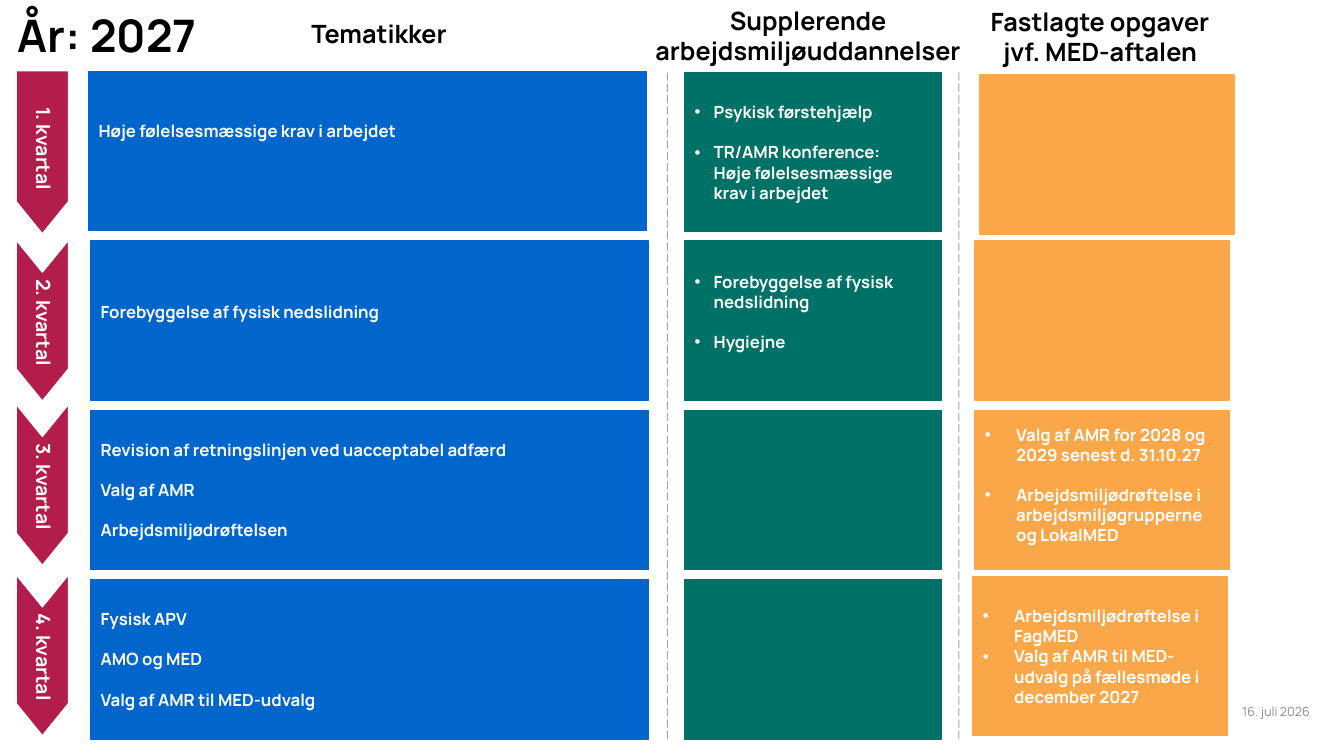
from pptx import Presentation
from pptx.dml.color import RGBColor
from pptx.enum.dml import MSO_LINE
from pptx.enum.shapes import MSO_CONNECTOR, MSO_SHAPE
from pptx.enum.text import MSO_ANCHOR, PP_ALIGN
from pptx.oxml.ns import qn
from pptx.util import Inches, Pt
from lxml import etree

RECT, LINE = MSO_SHAPE.RECTANGLE, MSO_CONNECTOR.STRAIGHT
TOP, MID, LOW = MSO_ANCHOR.TOP, MSO_ANCHOR.MIDDLE, MSO_ANCHOR.BOTTOM
LEFT, MIDDLE, RIGHT = PP_ALIGN.LEFT, PP_ALIGN.CENTER, PP_ALIGN.RIGHT
DASH = MSO_LINE.LONG_DASH


class Theme:
    font = "Manrope"
    blue, green, orange, red = "0066CC", "007167", "FAA749", "B21D4B"
    black, white, grey = "000000", "FFFFFF", "8C8C8C"
    title, head, label, body, small = 32, 18, 14, 12, 9
    gap = 14.4


# Content: text, box, format
HEADS = [
    ("År: 2027", (0.08, -0.15, 3.27, 0.82),
     dict(size=Theme.title, align=LEFT, anchor=LOW, spacing=0.9)),
    ("Tematikker", (0.98, 0.13, 5.56, 0.4), {}),
    ("Supplerende arbejdsmiljøuddannelser", (6.38, 0, 3.27, 0.71), {}),
    ("Fastlagte opgaver jvf. MED-aftalen", (9.65, 0.01, 2.52, 0.71), {}),
    ("16. juli 2026", (11.83, 6.86, 1.26, 0.4),
     dict(size=Theme.small, color=Theme.grey, bold=False, align=RIGHT, anchor=MID)),
]

# Quarter label, top, length, text insets left and right
QUARTERS = [
    ("1. kvartal", 0.7, 1.62, (0.08, 0.15)),
    ("2. kvartal", 2.38, 1.6, (0.32, 0.28)),
    ("3. kvartal", 4.01, 1.6, (0.32, 0.28)),
    ("4. kvartal", 5.7, 1.6, (0.32, 0.28)),
]

# Each cell: items, nudge across and down, extra room below, gap.
# An item is a string, or a list of lines under one bullet.
COLUMNS = [
    dict(left=0.9, width=5.53, fill=Theme.blue, indent=0, cells=[
        dict(items=["Høje følelsesmæssige krav i arbejdet"], nudge=(-0.02, 0), below=0.4),
        dict(items=["Forebyggelse af fysisk nedslidning"], below=0.17),
        dict(items=["Revision af retningslinjen ved uacceptabel adfærd",
                    "Valg af AMR", "Arbejdsmiljødrøftelsen"]),
        dict(items=["Fysisk APV", "AMO og MED", "Valg af AMR til MED-udvalg"]),
    ]),
    dict(left=6.79, width=2.55, fill=Theme.green, indent=0.19, cells=[
        dict(items=["Psykisk førstehjælp",
                    ["TR/AMR konference:", "Høje følelsesmæssige", "krav i arbejdet"]],
             nudge=(0, 0.01)),
        dict(items=["Forebyggelse af fysisk nedslidning", "Hygiejne"], below=0.17),
        dict(items=[]),
        dict(items=[]),
    ]),
    dict(left=9.67, width=2.52, fill=Theme.orange, indent=0.31, cells=[
        dict(items=[], nudge=(0.05, 0.03)),
        dict(items=[]),
        dict(items=["Valg af AMR for 2028 og 2029 senest d. 31.10.27",
                    "Arbejdsmiljødrøftelse i arbejdsmiljøgrupperne og LokalMED"], below=0.1),
        dict(items=["Arbejdsmiljødrøftelse i FagMED",
                    "Valg af AMR til MED-udvalg på fællesmøde i december 2027"],
             nudge=(-0.02, -0.03), gap=0),
    ]),
]
ROW_TOP, ROW_STEP, ROW_TALL = 0.71, 1.68, 1.58
ARROW_MID, ARROW_WIDE, NOTCH = 0.42, 0.52, 0.32
RULES, RULE_TOP, RULE_END = (6.62, 9.51), 0.72, 7.33


def rgb(code):
    return RGBColor.from_string(code)


def write(shape, items, size=Theme.body, color=Theme.white, bold=True, align=LEFT,
          anchor=MID, spacing=None, indent=0, gap=0, insets=(0.1, 0.05, 0.1, 0.05)):
    frame = shape.text_frame
    frame.word_wrap = True
    frame.vertical_anchor = anchor
    (frame.margin_left, frame.margin_top,
     frame.margin_right, frame.margin_bottom) = map(Inches, insets)
    lines = [(text, i, j) for i, item in enumerate(items)
             for j, text in enumerate([item] if isinstance(item, str) else item)]
    for n, (text, i, j) in enumerate(lines):
        para = frame.add_paragraph() if n else frame.paragraphs[0]
        para.alignment = align
        if spacing:
            para.line_spacing = spacing
        if i and not j and gap:
            para.space_before = Pt(gap)
        if indent:
            props = para._p.get_or_add_pPr()
            props.set("marL", str(Inches(indent)))
            props.set("indent", str(0 if j else -Inches(indent)))
            if not j:
                etree.SubElement(props, qn("a:buFont")).set("typeface", "Arial")
                etree.SubElement(props, qn("a:buChar")).set("char", "•")
        run = para.add_run()
        run.text = text
        run.font.name, run.font.size, run.font.bold = Theme.font, Pt(size), bold
        run.font.color.rgb = rgb(color)


def paint(shape, fill, line):
    shape.shadow.inherit = False
    shape.fill.solid()
    shape.fill.fore_color.rgb = rgb(fill)
    shape.line.color.rgb = rgb(line)
    shape.line.width = Pt(1)


def add_arrow(shapes, top, size, notched):
    # Drawn pointing right, then turned to point down
    left = ARROW_MID - size / 2
    high = top + size / 2 - ARROW_WIDE / 2
    mid, low, end = high + ARROW_WIDE / 2, high + ARROW_WIDE, left + size
    points = [(end - NOTCH, high), (end, mid), (end - NOTCH, low), (left, low)]
    if notched:
        points.append((left + NOTCH, mid))
    pen = shapes.build_freeform(Inches(left), Inches(high))
    pen.add_line_segments([(Inches(x), Inches(y)) for x, y in points])
    arrow = pen.convert_to_shape()
    arrow.rotation = 90
    paint(arrow, Theme.red, Theme.white)
    return arrow


def add_rule(shapes, x):
    rule = shapes.add_connector(LINE, Inches(x), Inches(RULE_END), Inches(x), Inches(RULE_TOP))
    rule.line.color.rgb = rgb(Theme.black)
    rule.line.width = Pt(0.75)
    rule.line.dash_style = DASH
    props = rule._element.spPr
    shade = props.find(".//" + qn("a:srgbClr"))
    etree.SubElement(shade, qn("a:alpha")).set("val", "35000")
    etree.SubElement(props, qn("a:effectLst"))


def main():
    deck = Presentation()
    deck.slide_width, deck.slide_height = Inches(13.33), Inches(7.5)
    shapes = deck.slides.add_slide(deck.slide_layouts[6]).shapes

    # Quarter arrows
    for n, (text, top, size, (near, far)) in enumerate(QUARTERS):
        arrow = add_arrow(shapes, top, size, notched=n > 0)
        write(arrow, [text], size=Theme.label, align=MIDDLE, spacing=0.9,
              insets=(near, 0.04, far, 0.04))

    # Column rules
    for x in RULES:
        add_rule(shapes, x)

    # Grid of cells
    for col in COLUMNS:
        for row, cell in enumerate(col["cells"]):
            dx, dy = cell.get("nudge", (0, 0))
            box = shapes.add_shape(RECT, Inches(col["left"] + dx),
                                   Inches(ROW_TOP + row * ROW_STEP + dy),
                                   Inches(col["width"]), Inches(ROW_TALL))
            paint(box, col["fill"], col["fill"])
            write(box, cell["items"], indent=col["indent"], gap=cell.get("gap", Theme.gap),
                  insets=(0.1, 0.05, 0.1, 0.05 + cell.get("below", 0)))

    # Title, column heads and date
    for text, place, form in HEADS:
        box = shapes.add_textbox(*map(Inches, place))
        base = dict(size=Theme.head, color=Theme.black, align=MIDDLE, anchor=TOP)
        write(box, [text], **{**base, **form})

    deck.save("out.pptx")


if __name__ == "__main__":
    main()
